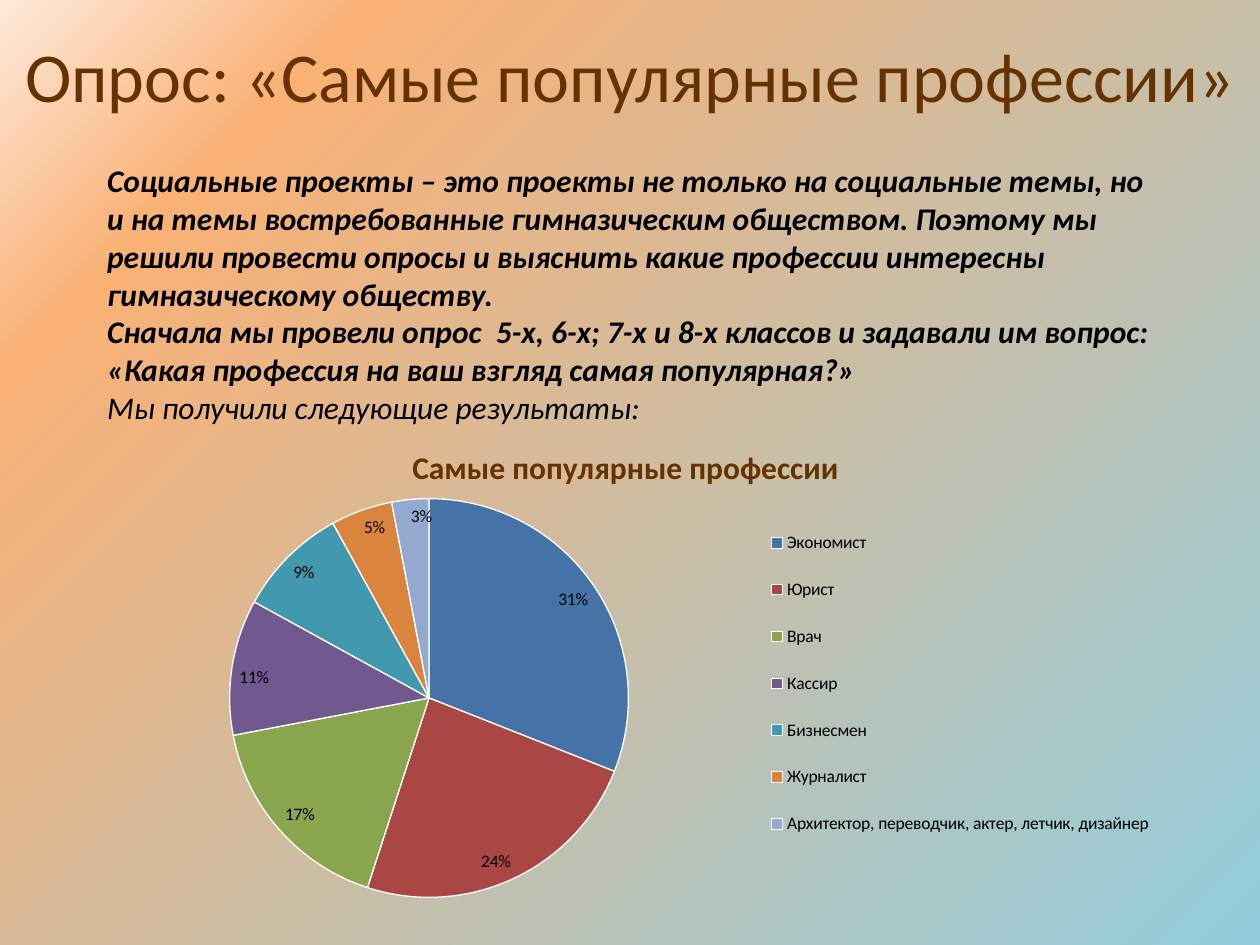
from dataclasses import dataclass

from lxml import etree
from pptx import Presentation
from pptx.chart.data import CategoryChartData
from pptx.dml.color import RGBColor
from pptx.enum import chart as ch, text as tx
from pptx.oxml import parse_xml
from pptx.oxml.ns import nsdecls, qn
from pptx.util import Inches, Pt

FONT = "Calibri"
COLORS = {"brown": "663300", "black": "000000", "white": "FFFFFF",
          "sky": "93CDDD", "orange": "F9B176", "cream": "FDEADA"}


@dataclass
class Profession:
    name: str
    percent: int
    color: str


@dataclass
class Statement:
    wording: str
    bold: bool


@dataclass
class Stop:
    position: int
    color: str
    alpha: int


PROFESSIONS = [
    Profession("Экономист", 31, "4572A7"),
    Profession("Юрист", 24, "AA4643"),
    Profession("Врач", 17, "89A54E"),
    Profession("Кассир", 11, "71588F"),
    Profession("Бизнесмен", 9, "4198AF"),
    Profession("Журналист", 5, "DB843D"),
    Profession("Архитектор, переводчик, актер, летчик, дизайнер", 3, "93A9CF"),
]
STATEMENTS = [
    Statement("Социальные проекты – это проекты не только на социальные темы, но и на темы "
              "востребованные гимназическим обществом. Поэтому мы решили провести опросы и "
              "выяснить какие профессии интересны гимназическому обществу.", True),
    Statement("Сначала мы провели опрос  5-х, 6-х; 7-х и 8-х классов и задавали им вопрос: "
              "«Какая профессия на ваш взгляд самая популярная?»", True),
    Statement("Мы получили следующие результаты:", False),
]
STOPS = [Stop(0, "sky", 82), Stop(83, "orange", 64), Stop(100, "cream", 85)]


def rgb(value: str) -> RGBColor:
    return RGBColor.from_string(value)


def set_font(font, size: float, color: str, bold: bool = False, italic: bool = False) -> None:
    font.name, font.size, font.bold, font.italic = FONT, Pt(size), bold, italic
    font.color.rgb = rgb(COLORS[color])


def place(shape, left: float, top: float, width: float, height: float) -> None:
    shape.left, shape.top = Inches(left), Inches(top)
    shape.width, shape.height = Inches(width), Inches(height)


def paint_background(slide, stops: list[Stop]) -> None:
    """Radial gradient spreading from the bottom right corner."""
    slide.background.fill.gradient()
    gradient = slide.element.find(".//" + qn("a:gradFill"))
    for child in list(gradient):
        gradient.remove(child)
    marks = "".join(
        f'<a:gs pos="{s.position * 1000}"><a:srgbClr val="{COLORS[s.color]}">'
        f'<a:alpha val="{s.alpha * 1000}"/></a:srgbClr></a:gs>' for s in stops)
    gradient.append(parse_xml(f'<a:gsLst {nsdecls("a")}>{marks}</a:gsLst>'))
    gradient.append(parse_xml(f'<a:path {nsdecls("a")} path="circle">'
                              '<a:fillToRect l="100000" t="100000"/></a:path>'))


def write_statements(body, statements: list[Statement]) -> None:
    frame = body.text_frame
    frame.text = "\n".join(s.wording for s in statements)
    frame.auto_size = tx.MSO_AUTO_SIZE.SHAPE_TO_FIT_TEXT
    for paragraph, statement in zip(frame.paragraphs, statements):
        set_font(paragraph.font, 18, "black", statement.bold, italic=True)
        paragraph.space_before = Pt(0)
        properties = paragraph._p.get_or_add_pPr()
        properties.set("marL", "0")
        properties.set("indent", "0")
        bullet = etree.Element(qn("a:buNone"))
        properties.find(qn("a:spcBef")).addnext(bullet)


def set_layout(parent, x: float, y: float, w: float, h: float, inner: bool = False) -> None:
    """Fix a chart part at fractions of the chart area."""
    for old in parent.findall(qn("c:layout")):
        parent.remove(old)
    target = '<c:layoutTarget val="inner"/>' if inner else ""
    layout = parse_xml(
        f'<c:layout {nsdecls("c")}><c:manualLayout>{target}'
        '<c:xMode val="edge"/><c:yMode val="edge"/>'
        f'<c:x val="{x}"/><c:y val="{y}"/><c:w val="{w}"/><c:h val="{h}"/>'
        '</c:manualLayout></c:layout>')
    position = parent.find(qn("c:legendPos"))
    if position is None:
        parent.insert(0, layout)
    else:
        position.addnext(layout)


def draw_pie(slide, professions: list[Profession]) -> None:
    data = CategoryChartData(number_format="0")
    data.categories = [p.name for p in professions]
    data.add_series("Series 1", [p.percent for p in professions])
    pie = slide.shapes.add_chart(ch.XL_CHART_TYPE.PIE, Inches(0.75), Inches(3.36),
                                 Inches(8.43), Inches(3.86), data).chart
    set_font(pie.font, 10, "black")

    # Chart title
    pie.has_title = True
    heading = pie.chart_title.text_frame
    heading.text = "Самые популярные профессии"
    set_font(heading.paragraphs[0].font, 18, "brown", bold=True)
    pie.chart_title.include_in_layout = False

    # Slices
    plot = pie.plots[0]
    plot.vary_by_categories = True
    for index, profession in enumerate(professions):
        look = plot.series[0].points[index].format
        look.fill.solid()
        look.fill.fore_color.rgb = rgb(profession.color)
        look.line.color.rgb = rgb(COLORS["white"])
        look.line.width = Pt(0.75)

    # Percent labels
    plot.has_data_labels = True
    labels = plot.data_labels
    labels.show_percentage, labels.show_value = True, False
    labels.number_format, labels.number_format_is_linked = "0%", False
    labels.position = ch.XL_LABEL_POSITION.INSIDE_END
    set_font(labels.font, 10, "black")

    # Legend and plot area
    pie.has_legend = True
    pie.legend.position = ch.XL_LEGEND_POSITION.RIGHT
    pie.legend.include_in_layout = False
    set_font(pie.legend.font, 10, "black")
    set_layout(pie.legend._element, 0.63, 0.17, 0.37, 0.73)
    set_layout(plot._element.getparent(), 0, 0.155, 0.63, 0.82, inner=True)


def main() -> None:
    deck = Presentation()
    deck.slide_width, deck.slide_height = Inches(10), Inches(7.5)
    slide = deck.slides.add_slide(deck.slide_layouts[1])
    paint_background(slide, STOPS)

    # Title
    title = slide.shapes.title
    place(title, 0, 0.21, 10, 0.77)
    title.text_frame.text = "Опрос: «Самые популярные профессии»"
    title.text_frame.auto_size = tx.MSO_AUTO_SIZE.SHAPE_TO_FIT_TEXT
    set_font(title.text_frame.paragraphs[0].font, 40, "brown")

    # Introduction
    introduction = slide.placeholders[1]
    place(introduction, 0.75, 1.23, 8.58, 2.22)
    write_statements(introduction, STATEMENTS)

    draw_pie(slide, PROFESSIONS)
    deck.save("out.pptx")


if __name__ == "__main__":
    main()
